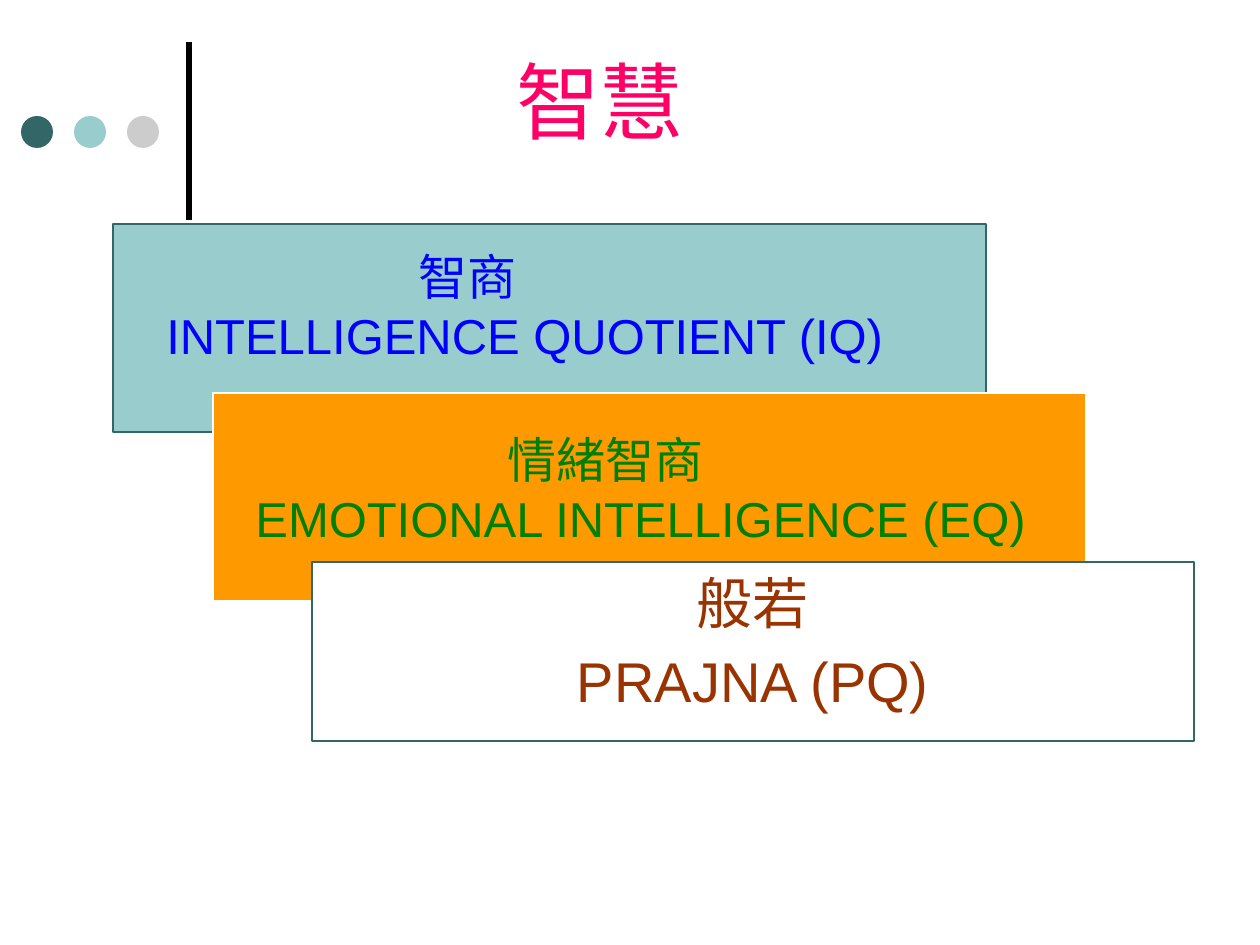
import pptx
import pptx.dml.color
import pptx.enum.shapes
import pptx.enum.text
import pptx.oxml.ns
import pptx.util
import lxml.etree

RGBColor = pptx.dml.color.RGBColor
SHAPE = pptx.enum.shapes.MSO_SHAPE
ALIGN = pptx.enum.text.PP_ALIGN
ANCHOR = pptx.enum.text.MSO_ANCHOR

BLACK = RGBColor(0x00, 0x00, 0x00)
WHITE = RGBColor(0xFF, 0xFF, 0xFF)
TEAL = RGBColor(0x33, 0x66, 0x66)
AQUA = RGBColor(0x99, 0xCC, 0xCC)
GREY = RGBColor(0xCC, 0xCC, 0xCC)
ORANGE = RGBColor(0xFF, 0x99, 0x00)
PINK = RGBColor(0xFF, 0x00, 0x66)
BLUE = RGBColor(0x00, 0x00, 0xFF)
GREEN = RGBColor(0x00, 0x80, 0x00)
BROWN = RGBColor(0x99, 0x33, 0x00)


class SlideBuilder:
    font = "Arial"
    scale = 914400 / 126

    def __init__(self, page):
        self.page = page

    def px(self, *lengths):
        return [pptx.util.Emu(round(length * self.scale)) for length in lengths]

    def add_span(self, para, text, size, color):
        span = para.add_run()
        span.text = text
        span.font.name = self.font
        span.font.size = pptx.util.Pt(size)
        span.font.color.rgb = color

    def title(self, bounds, text, size, color):
        box = self.page.shapes.title
        box.left, box.top, box.width, box.height = self.px(*bounds)
        box.text_frame.vertical_anchor = ANCHOR.MIDDLE
        para = box.text_frame.paragraphs[0]
        para.alignment = ALIGN.CENTER
        self.add_span(para, text, size, color)

    def line(self, start, end, color, width):
        rule = self.page.shapes.add_connector(
            pptx.enum.shapes.MSO_CONNECTOR.STRAIGHT, *self.px(*start, *end))
        rule.line.color.rgb = color
        rule.line.width = pptx.util.Pt(width)
        properties = rule._element.spPr
        lxml.etree.SubElement(properties, pptx.oxml.ns.qn("a:effectLst"))

    def shape(self, kind, bounds, fill, outline=None):
        box = self.page.shapes.add_shape(kind, *self.px(*bounds))
        box.shadow.inherit = False
        box.fill.solid()
        box.fill.fore_color.rgb = fill
        if outline is None:
            box.line.fill.background()
        else:
            box.line.color.rgb = outline
            box.line.width = pptx.util.Pt(0.75)
        return box

    def caption(self, bounds, texts, color):
        box = self.page.shapes.add_textbox(*self.px(*bounds))
        frame = box.text_frame
        frame.word_wrap = False
        heading = frame.paragraphs[0]
        heading._p.get_or_add_pPr().set("marL", str(pptx.util.Inches(2)))
        for para, text in zip((heading, frame.add_paragraph()), texts):
            para.alignment = ALIGN.LEFT
            self.add_span(para, text, 28, color)

    def panel(self, bounds, texts, color, fill, outline):
        frame = self.shape(SHAPE.RECTANGLE, bounds, fill, outline).text_frame
        frame.word_wrap = True
        frame.vertical_anchor = ANCHOR.TOP
        for index, text in enumerate(texts):
            para = frame.add_paragraph() if index else frame.paragraphs[0]
            para.alignment = ALIGN.CENTER
            if index:
                para.space_before = pptx.util.Pt(6.4)
            self.add_span(para, text, 32, color)


def main():
    deck = pptx.Presentation()
    deck.slide_width = pptx.util.Inches(10)
    deck.slide_height = pptx.util.Inches(7.5)
    builder = SlideBuilder(deck.slides.add_slide(deck.slide_layouts[5]))

    builder.line((189, 220), (189, 42), BLACK, 3)
    for index, color in enumerate((TEAL, AQUA, GREY)):
        builder.shape(SHAPE.OVAL, (21 + 53 * index, 116, 32, 32), color)
    builder.title((491, 45, 218, 110), "智慧", 48, PINK)

    builder.shape(SHAPE.RECTANGLE, (113, 224, 873, 208), AQUA, TEAL)
    builder.shape(SHAPE.RECTANGLE, (213, 393, 873, 208), ORANGE, WHITE)
    builder.caption((154, 240, 743, 130),
                    ("智商", "INTELLIGENCE QUOTIENT (IQ)"), BLUE)
    builder.caption((243, 423, 799, 130),
                    ("情緒智商", "EMOTIONAL INTELLIGENCE (EQ)"), GREEN)
    builder.panel((312, 562, 882, 179), ("般若", "PRAJNA (PQ)"),
                  BROWN, WHITE, TEAL)

    deck.save("out.pptx")


if __name__ == "__main__":
    main()
